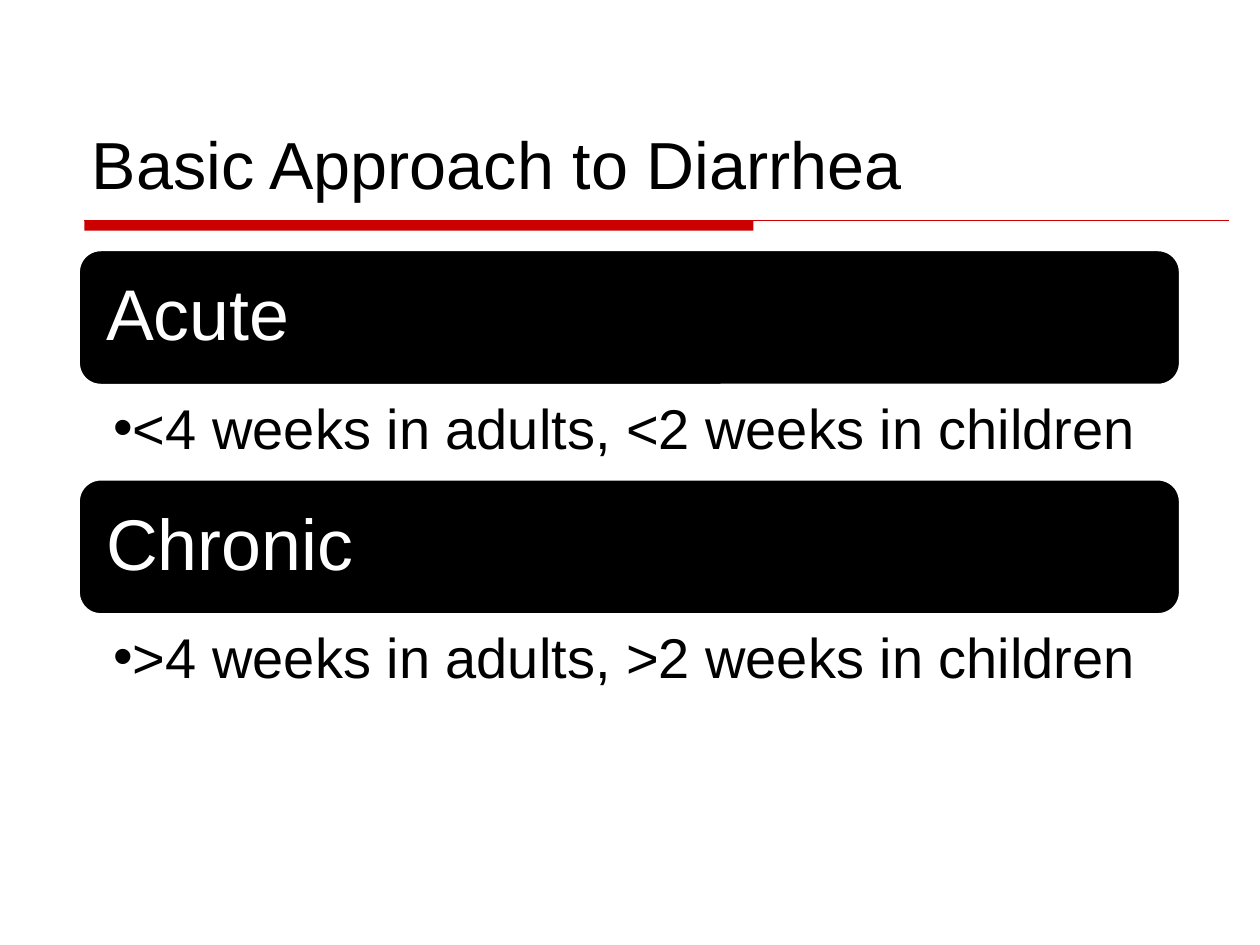
from pptx import Presentation
from pptx.dml.color import RGBColor
from pptx.enum.shapes import MSO_CONNECTOR, MSO_SHAPE
from pptx.enum.text import MSO_ANCHOR, MSO_AUTO_SIZE, PP_ALIGN
from pptx.oxml.ns import qn
from pptx.util import Inches, Pt
from lxml.etree import SubElement

COLORS = {"ink": "000000", "paper": "FFFFFF", "rule": "CC0000"}


class Deck:
    font = "Arial"

    def __init__(self):
        self.prs = Presentation()
        self.prs.slide_width = Inches(10)
        self.prs.slide_height = Inches(7.5)
        self.slide = self.prs.slides.add_slide(self.prs.slide_layouts[3])
        self.head, *self.lists = self.slide.placeholders

    def color(self, name):
        return RGBColor.from_string(COLORS[name])

    def place(self, shape, x, y, w, h):
        shape.left, shape.top = Inches(x), Inches(y)
        shape.width, shape.height = Inches(w), Inches(h)

    def fill_text(self, shape, text, anchor, pads):
        frame = shape.text_frame
        frame.text = text
        frame.word_wrap = True
        frame.auto_size = MSO_AUTO_SIZE.NONE
        frame.vertical_anchor = anchor
        frame.margin_left, frame.margin_top, frame.margin_right, frame.margin_bottom = map(Inches, pads)
        par = frame.paragraphs[0]
        par.alignment = PP_ALIGN.LEFT
        par.space_before = Pt(0)
        return par

    def style(self, par, size, color):
        par.font.name = self.font
        par.font.size = Pt(size)
        par.font.color.rgb = self.color(color)

    def title(self, text, x, y, w, h):
        self.place(self.head, x, y, w, h)
        par = self.fill_text(self.head, text, MSO_ANCHOR.BOTTOM, (0.1, 0.05, 0.1, 0.05))
        self.style(par, 38, "ink")

    def block(self, kind, x, y, w, h, fill):
        shape = self.slide.shapes.add_shape(kind, Inches(x), Inches(y), Inches(w), Inches(h))
        shape.shadow.inherit = False
        shape.fill.solid()
        shape.fill.fore_color.rgb = self.color(fill)
        shape.line.fill.background()
        return shape

    def rule(self, x, y, thick, end):
        self.block(MSO_SHAPE.RECTANGLE, x, y, thick, 0.08, "rule")
        line = self.slide.shapes.add_connector(
            MSO_CONNECTOR.STRAIGHT, Inches(x), Inches(y), Inches(end), Inches(y))
        line.line.color.rgb = self.color("rule")
        line.line.width = Pt(0.75)
        SubElement(line._element.spPr, qn("a:effectLst"))

    def band(self, text, x, y, w, h):
        shape = self.block(MSO_SHAPE.ROUNDED_RECTANGLE, x, y, w, h, "ink")
        shape.line.color.rgb = self.color("paper")
        shape.line.width = Pt(2)
        par = self.fill_text(shape, text, MSO_ANCHOR.MIDDLE, (0.17,) * 4)
        par.line_spacing = 0.9
        self.style(par, 41, "paper")

    def bullet(self, box, text, x, y, w, h):
        self.place(box, x, y, w, h)
        par = self.fill_text(box, text, MSO_ANCHOR.TOP, (0.28, 0.06, 0.32, 0.06))
        props = par._p.get_or_add_pPr()
        props.set("marL", str(Inches(0.13)))
        props.set("indent", str(-Inches(0.13)))
        SubElement(props, qn("a:buChar")).set("char", "•")
        self.style(par, 32, "ink")


def main():
    deck = Deck()
    deck.rule(0.67, 1.75, 5.31, 9.75)
    deck.title("Basic Approach to Diarrhea", 0.63, 0.33, 8.75, 1.33)
    left, top, width, tall, step = 0.62, 1.98, 8.75, 1.08, 1.82
    groups = [
        ("Acute", "<4 weeks in adults, <2 weeks in children", 0.74),
        ("Chronic", ">4 weeks in adults, >2 weeks in children", 1.14),
    ]
    for row, (box, (name, span, depth)) in enumerate(zip(deck.lists, groups)):
        y = top + row * step
        deck.band(name, left, y, width, tall)
        deck.bullet(box, span, left, y + tall, width, depth)
    deck.prs.save("out.pptx")


if __name__ == "__main__":
    main()
